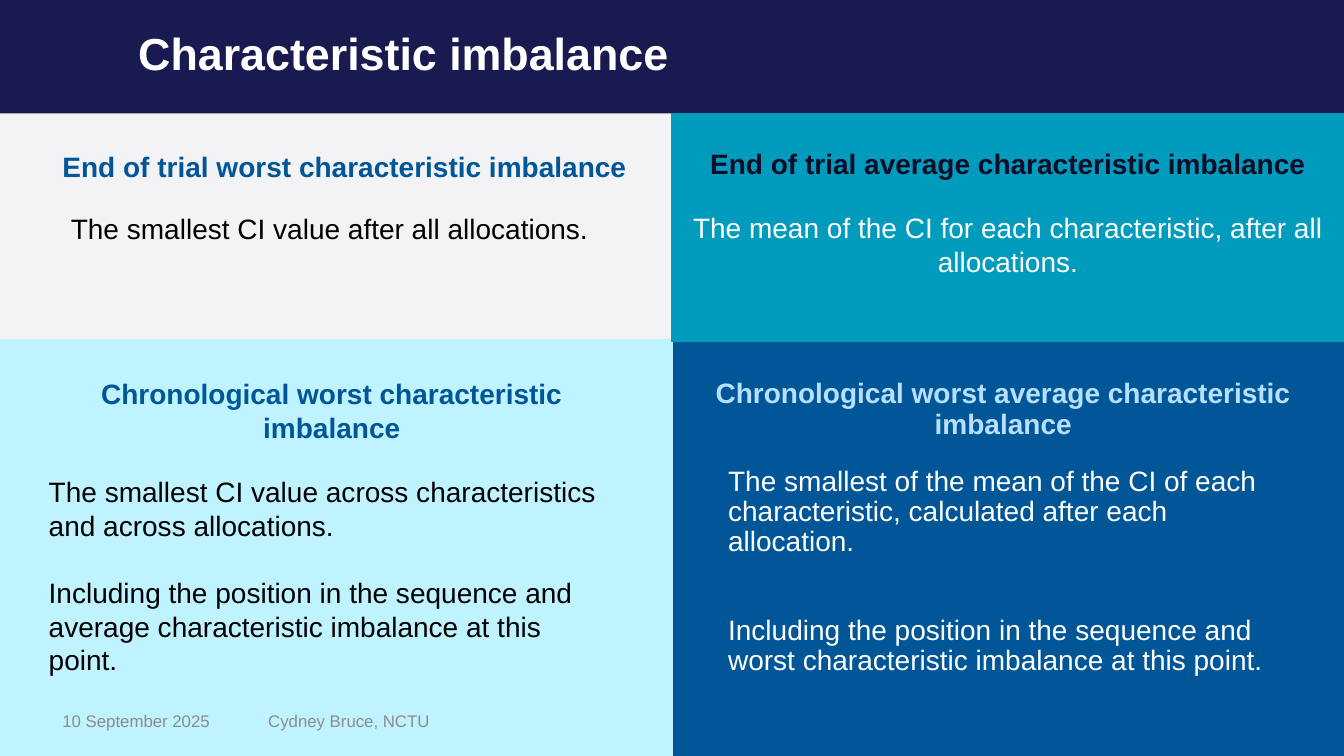
"""Build the characteristic imbalance slide with four definition panels."""
from pptx import Presentation
from pptx.dml.color import RGBColor
from pptx.enum.shapes import MSO_SHAPE
from pptx.enum.text import MSO_ANCHOR, PP_ALIGN
from pptx.util import Pt

PX = 9525
FONT = "Arial"
NAVY = RGBColor(0x19, 0x1A, 0x4F)
BLUE = RGBColor(0x00, 0x56, 0x97)
TEAL = RGBColor(0x00, 0x9B, 0xBD)
PALE_CYAN = RGBColor(0xBF, 0xF3, 0xFF)
PALE_BLUE = RGBColor(0xB7, 0xE0, 0xFF)
OFF_WHITE = RGBColor(0xF3, 0xF3, 0xF5)
INK = RGBColor(0x0D, 0x0D, 0x27)
GREY = RGBColor(0x8C, 0x8C, 0x8C)
BLACK = RGBColor(0x00, 0x00, 0x00)
WHITE = RGBColor(0xFF, 0xFF, 0xFF)
LEFT, CENTER = PP_ALIGN.LEFT, PP_ALIGN.CENTER


def px(*lengths):
    """Turn pixel lengths into EMU."""
    return [length * PX for length in lengths]


def add_panel(s, box, color, outlined=False):
    """Add a filled rectangle, outlined in its own colour if asked."""
    sp = s.shapes.add_shape(MSO_SHAPE.RECTANGLE, *px(*box))
    sp.shadow.inherit = False
    sp.fill.solid()
    sp.fill.fore_color.rgb = color
    if outlined:
        sp.line.color.rgb = color
        sp.line.width = Pt(1)
    else:
        sp.line.fill.background()
    return sp


def style(p, color, size=20, bold=False, align=LEFT, before=0, spacing=1.0):
    """Format one paragraph."""
    p.alignment = align
    p.line_spacing = spacing
    p.space_before = Pt(before)
    p.font.name = FONT
    p.font.size = Pt(size)
    p.font.bold = bold
    p.font.color.rgb = color


def fill_text(tf, *items, anchor=MSO_ANCHOR.TOP):
    """Write (text, format) items as the paragraphs of a text frame."""
    tf.word_wrap = True
    tf.vertical_anchor = anchor
    for i, (text, fmt) in enumerate(items):
        p = tf.paragraphs[0] if i == 0 else tf.add_paragraph()
        p.text = text
        style(p, **fmt)


def add_text(s, box, *items, anchor=MSO_ANCHOR.TOP):
    """Add a wrapping text box."""
    fill_text(s.shapes.add_textbox(*px(*box)).text_frame, *items, anchor=anchor)


def set_title(s, text, box):
    """Place the title in front of its band and format it."""
    title = s.shapes.title
    title.left, title.top, title.width, title.height = px(*box)
    fill_text(title.text_frame, (text, dict(color=WHITE, size=32, bold=True, spacing=0.9)),
              anchor=MSO_ANCHOR.MIDDLE)
    s.shapes.element.append(title.element)


def main():
    """Build and save the slide."""
    prs = Presentation()
    prs.slide_width, prs.slide_height = px(1280, 720)
    s = prs.slides.add_slide(prs.slide_layouts[5])
    s.background.fill.solid()
    s.background.fill.fore_color.rgb = OFF_WHITE

    add_panel(s, (640, 108, 640, 612), BLUE)
    add_panel(s, (0, 0, 1280, 108), NAVY)
    add_panel(s, (0, 324, 640, 396), PALE_CYAN, outlined=True)
    set_title(s, "Characteristic imbalance", (122, -1, 1111, 108))

    add_text(s, (50, 141, 560, 66),
             ("End of trial worst characteristic imbalance",
              dict(color=BLUE, bold=True, spacing=0.9)))
    add_text(s, (58, 200, 545, 66),
             ("The smallest CI value after all allocations.",
              dict(color=BLACK, spacing=0.9)))

    average = add_panel(s, (640, 108, 640, 217), TEAL, outlined=True)
    average.text_frame.margin_bottom = 34 * PX
    fill_text(average.text_frame,
              ("End of trial average characteristic imbalance",
               dict(color=INK, bold=True, align=CENTER)),
              ("The mean of the CI for each characteristic, after all allocations.",
               dict(color=WHITE, align=CENTER, before=22)),
              anchor=MSO_ANCHOR.MIDDLE)

    add_text(s, (37, 354, 558, 329),
             ("Chronological worst characteristic imbalance",
              dict(color=BLUE, bold=True, align=CENTER)),
             ("The smallest CI value across characteristics and across allocations.",
              dict(color=BLACK, before=22)),
             ("Including the position in the sequence and average characteristic "
              "imbalance at this point.", dict(color=BLACK, before=24)))

    add_text(s, (651, 357, 609, 66),
             ("Chronological worst average characteristic imbalance",
              dict(color=PALE_BLUE, bold=True, align=CENTER, spacing=0.9)))
    add_text(s, (684, 440, 545, 83),
             ("The smallest of the mean of the CI of each characteristic, "
              "calculated after each allocation.", dict(color=WHITE, spacing=0.9)),
             ("Including the position in the sequence and worst characteristic "
              "imbalance at this point.", dict(color=WHITE, before=42, spacing=0.9)))

    for text, left, width in (("10 September 2025", 50, 169),
                              ("Cydney Bruce, NCTU", 246, 364)):
        add_text(s, (left, 667, width, 38), (text, dict(color=GREY, size=12)),
                 anchor=MSO_ANCHOR.MIDDLE)

    prs.save("out.pptx")


if __name__ == "__main__":
    main()
